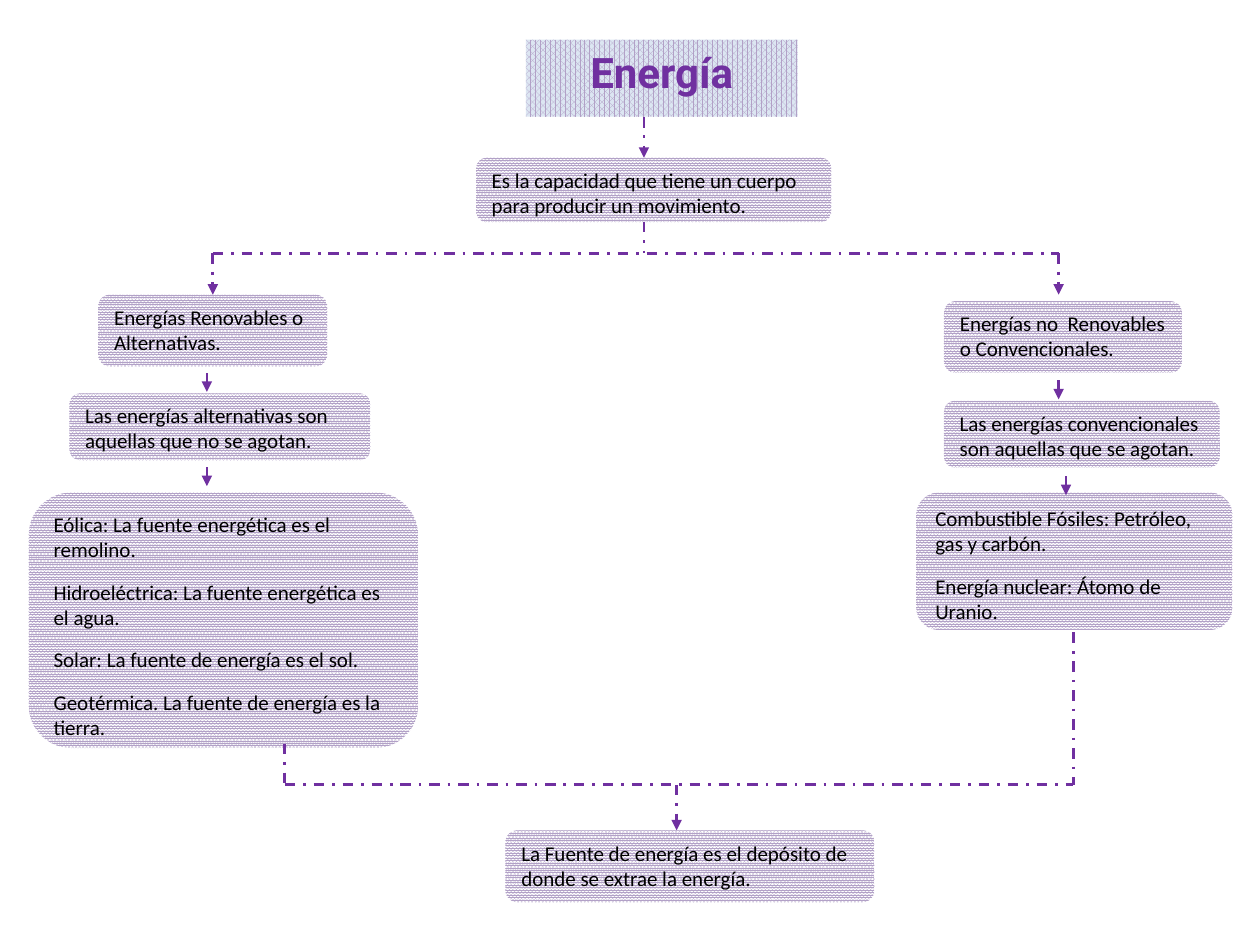
from lxml import etree
from pptx import Presentation
from pptx import util as u
from pptx.dml.color import RGBColor
from pptx.enum import dml, shapes, text
from pptx.oxml.ns import qn

colors = {"purple": "7030A0", "lilac": "B2A1C7", "pale": "DCE6F2", "white": "FFFFFF", "black": "000000"}


def place(box, frame, pattern, back):
    box.left, box.top, box.width, box.height = [u.Cm(value) for value in frame]
    box.fill.patterned()
    box.fill.pattern = pattern
    box.fill.fore_color.rgb = RGBColor.from_string(colors["lilac"])
    box.fill.back_color.rgb = RGBColor.from_string(colors[back])
    box.line.fill.background()


def write(box, lines, font, size, color, bold, align):
    frame = box.text_frame
    frame.text = "\n".join(lines)
    frame.word_wrap = True
    frame.auto_size = text.MSO_AUTO_SIZE.NONE
    frame.vertical_anchor = text.MSO_ANCHOR.TOP
    for para in frame.paragraphs:
        para.alignment = align
        para.space_after = u.Pt(10)
        for span in para.runs:
            span.font.name = font
            span.font.size = u.Pt(size)
            span.font.bold = bold
            span.font.color.rgb = RGBColor.from_string(colors[color])


deck = Presentation()
deck.slide_width, deck.slide_height = u.Cm(25.4), u.Cm(19.05)
page = deck.slides.add_slide(deck.slide_layouts[5])

title = page.shapes.title
place(title, (10.6, 0.8, 5.48, 1.55), dml.MSO_PATTERN.PERCENT_75, "pale")
outline = etree.Element(qn("a:prstGeom"), prst="roundRect")
etree.SubElement(outline, qn("a:avLst"))
title.element.spPr.find(qn("a:xfrm")).addnext(outline)
write(title, ["Energía"], "Roboto", 24, "purple", True, text.PP_ALIGN.CENTER)

concepts = [
    ((9.6, 3.18, 7.16, 1.3), ["Es la capacidad que tiene un cuerpo para producir un movimiento."]),
    ((1.98, 5.94, 4.62, 1.45), ["Energías Renovables o Alternativas."]),
    ((19.03, 6.07, 4.8, 1.45), ["Energías no  Renovables o Convencionales."]),
    ((1.4, 7.93, 6.07, 1.35), ["Las energías alternativas son aquellas que no se agotan."]),
    ((19.03, 8.08, 5.56, 1.35), ["Las energías convencionales son aquellas que se agotan."]),
    ((0.58, 9.93, 7.85, 5.15), [
        "Eólica: La fuente energética es el remolino.",
        "Hidroeléctrica: La fuente energética es el agua.",
        "Solar: La fuente de energía es el sol.",
        "Geotérmica. La fuente de energía es la tierra.",
    ]),
    ((18.47, 9.93, 6.38, 2.77), [
        "Combustible Fósiles: Petróleo, gas y carbón.",
        "Energía nuclear: Átomo de Uranio.",
    ]),
    ((10.19, 16.74, 7.44, 1.45), ["La Fuente de energía es el depósito de donde se extrae la energía."]),
]
for frame, lines in concepts:
    box = page.shapes.add_shape(shapes.MSO_SHAPE.ROUNDED_RECTANGLE, 0, 0, 0, 0)
    box.shadow.inherit = False
    place(box, frame, dml.MSO_PATTERN.PERCENT_90, "white")
    write(box, lines, "Calibri", 12, "black", False, text.PP_ALIGN.LEFT)

stem, left, right, fork = 12.98, 4.29, 21.34, 5.11
source_left, source_right, source_stem, join = 5.74, 21.64, 13.64, 15.82
links = [
    (stem, 2.36, stem, 3.18, True),
    (stem, 4.47, stem, fork, False),
    (left, fork, right, fork, False),
    (left, fork, left, 5.94, True),
    (right, fork, right, 5.94, True),
    (4.17, 7.52, 4.17, 7.9, True),
    (right, 7.67, right, 8.05, True),
    (4.17, 9.42, 4.17, 9.8, True),
    (21.49, 9.6, 21.49, 9.98, True),
    (source_left, 14.99, source_left, join, False),
    (source_right, 12.75, source_right, join, False),
    (source_left, join, source_right, join, False),
    (source_stem, join, source_stem, 16.74, True),
]
for *ends, arrow in links:
    link = page.shapes.add_connector(shapes.MSO_CONNECTOR.STRAIGHT, *[u.Cm(value) for value in ends])
    link.line.color.rgb = RGBColor.from_string(colors["purple"])
    link.line.width = u.Pt(1.5)
    link.line.dash_style = dml.MSO_LINE.DASH_DOT
    properties = link.element.spPr
    if arrow:
        etree.SubElement(properties.find(qn("a:ln")), qn("a:tailEnd"), type="triangle")
    etree.SubElement(properties, qn("a:effectLst"))

deck.save("out.pptx")
